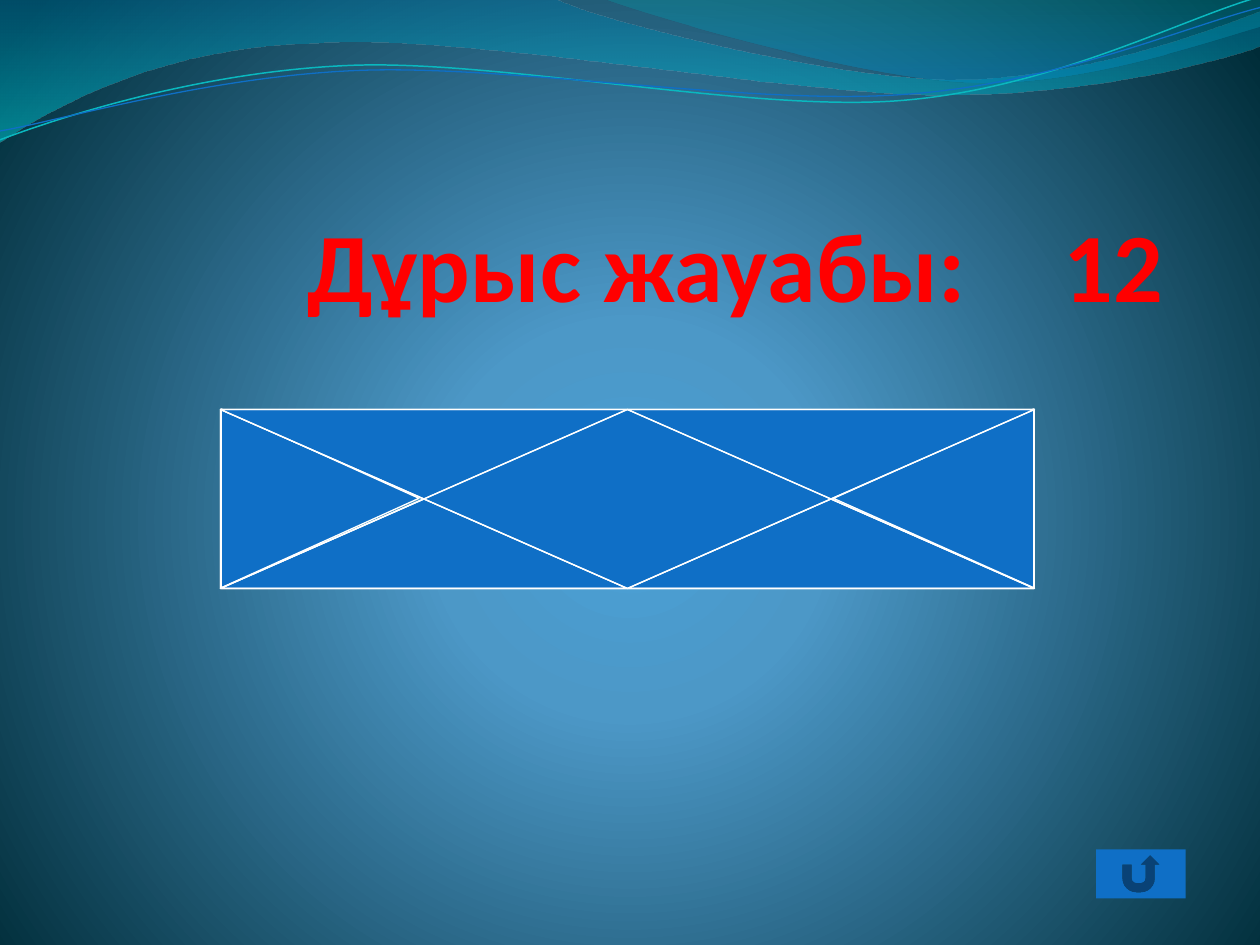
from lxml import etree
from pptx import Presentation
from pptx.dml.color import RGBColor
from pptx.enum import shapes, text
from pptx.oxml.ns import nsdecls, qn
from pptx.util import Inches, Pt

TITLE = "Дұрыс жауабы:\t12"
BLUE, WHITE, RED = "0F6FC6", "FFFFFF", "FF0000"
GLOW = [(0, "4AA0D6", 100), (25, "4C98C7", 100), (100, "002C38", 100)]
ROUND = '<a:path path="circle"><a:fillToRect l="10000" t="110000" r="10000" b="100000"/></a:path>'
DOWN = '<a:lin ang="5400000" scaled="0"/>'

WAVES = [
    ([[(0, 0)], [(4.4, -0.01)],
      [(4.76, 0.17), (6.64, 0.63), (7.58, 0.63)],
      [(8.53, 0.63), (9.58, 0.26), (10, 0.09)], [(10.01, 0.36)],
      [(9.83, 0.44), (8.7, 0.76), (7.46, 0.75)],
      [(6.22, 0.75), (3.82, 0.28), (2.57, 0.34)],
      [(1.29, 0.36), (0.46, 0.83), (-0.01, 1.13)], [(0, 0)]],
     [(0, "0074A1", 45), (100, "00C6CF", 55)]),
    ([[(4.79, -0.01)],
      [(5.09, 0.11), (6.82, 0.62), (7.69, 0.65)],
      [(8.56, 0.69), (9.61, 0.32), (10, 0.21)], [(10, 0)], [(4.79, -0.01)]],
     [(0, "00A1A9", 30), (80, "008BBF", 45)]),
]
STREAKS = [
    ([[(0, 1.11)],
      [(0.48, 0.93), (1.58, 0.57), (2.77, 0.52)],
      [(3.95, 0.47), (5.93, 0.89), (7.13, 0.8)],
      [(8.33, 0.71), (9.38, 0.15), (9.98, -0.02)]], "0AB8BF", 0.85),
    ([[(0, 1.04)],
      [(0.47, 0.96), (1.64, 0.61), (2.83, 0.56)],
      [(4.03, 0.51), (5.97, 0.84), (7.17, 0.75)],
      [(8.36, 0.67), (9.41, 0.21), (10, 0.06)]], BLUE, 0.75),
]

LEFT, TOP, HALF, HIGH = 1.75, 3.25, 3.23, 1.42
MID, ROW = LEFT + HALF, HIGH / 2
KINDS = shapes.MSO_SHAPE
PEAKS = [
    ((1.83, 3.17, HIGH, 1.57), 90, BLUE),
    ((LEFT, TOP + ROW, HALF, ROW), 0, BLUE),
    ((LEFT, TOP, HALF, ROW), 180, BLUE),
    ((MID, TOP, HALF, ROW), 180, BLUE),
    ((MID, TOP + ROW, HALF, ROW), 0, BLUE),
    ((6.7, 3.16, HIGH, 1.59), 270, BLUE),
    ((LEFT, TOP, 2 * HALF, HIGH), 180, BLUE),
    ((LEFT, TOP, 2 * HALF, HIGH), 0, None),
]


def paint(part, color):
    part.solid()
    part.fore_color.rgb = RGBColor.from_string(color)


def blend(fill, host, stops, tail):
    fill.solid()
    old = host.find(".//" + qn("a:solidFill"))
    marks = "".join(
        f'<a:gs pos="{pos * 1000}"><a:srgbClr val="{color}">'
        f'<a:alpha val="{alpha * 1000}"/></a:srgbClr></a:gs>'
        for pos, color, alpha in stops)
    new = etree.fromstring(
        f'<a:gradFill {nsdecls("a")} rotWithShape="1"><a:gsLst>{marks}</a:gsLst>{tail}</a:gradFill>')
    old.getparent().replace(old, new)


def style(shape, fill=None, line=None, width=0.75):
    shape.shadow.inherit = False
    if fill:
        paint(shape.fill, fill)
    else:
        shape.fill.background()
    if line:
        paint(shape.line.fill, line)
        shape.line.width = Pt(width)
    else:
        shape.line.fill.background()


def curve(slide, parts, close):
    dots = [(Inches(x), Inches(y)) for part in parts for x, y in part]
    pen = slide.shapes.build_freeform(*dots[0])
    pen.add_line_segments(dots[1:], close=close)
    shape = pen.convert_to_shape()
    legs = iter(list(shape.element.iter(qn("a:lnTo"))))
    for part in parts[1:]:
        first, *rest = [next(legs) for _ in part]
        if rest:
            bend = etree.Element(qn("a:cubicBezTo"))
            first.addprevious(bend)
            for leg in (first, *rest):
                bend.append(leg[0])
                leg.getparent().remove(leg)
    return shape


def place(slide, kind, box):
    return slide.shapes.add_shape(kind, *map(Inches, box))


def main():
    deck = Presentation()
    deck.slide_width, deck.slide_height = Inches(10), Inches(7.5)
    slide = deck.slides.add_slide(deck.slide_layouts[0])
    spare = slide.placeholders[1].element
    spare.getparent().remove(spare)
    blend(slide.background.fill, slide.element, GLOW, ROUND)

    for parts, stops in WAVES:
        wave = curve(slide, parts, True)
        style(wave)
        blend(wave.fill, wave.element, stops, DOWN)
    for parts, color, width in STREAKS:
        style(curve(slide, parts, False), line=color, width=width)

    for box, turn, fill in PEAKS:
        peak = place(slide, KINDS.ISOSCELES_TRIANGLE, box)
        peak.rotation = turn
        style(peak, fill, WHITE)
    for down in (False, True):
        for side, left in enumerate((LEFT, MID)):
            wedge = place(slide, KINDS.RIGHT_TRIANGLE, (left, TOP, HALF, HIGH))
            style(wedge, line=WHITE)
            frame = wedge.element.spPr.find(qn("a:xfrm"))
            if side:
                frame.set("flipH", "1")
            if down:
                frame.set("flipV", "1")

    title = slide.shapes.title
    title.left, title.top, title.width, title.height = map(Inches, (0.75, 0.99, 8.5, 1.57))
    body = title.text_frame
    body.text = TITLE
    body.auto_size = text.MSO_AUTO_SIZE.NONE
    body.vertical_anchor = text.MSO_ANCHOR.BOTTOM
    body.margin_left = body.margin_top = body.margin_bottom = 0
    body.margin_right = Inches(0.02)
    line = body.paragraphs[0]
    line.alignment = text.PP_ALIGN.RIGHT
    line.font.size = Pt(56)
    props = line.runs[0].font
    props.name, props.size, props.bold = "Calibri", Pt(56), True
    props.color.rgb = RGBColor.from_string(RED)
    rule = line.runs[0].font and body.paragraphs[0]._p.get_or_add_pPr()
    rule.set("defTabSz", str(Inches(1)))
    tabs = etree.Element(qn("a:tabLst"))
    etree.SubElement(tabs, qn("a:tab"), pos=str(Inches(6)), algn="l")
    rule.insert(0, tabs)

    style(place(slide, KINDS.ACTION_BUTTON_RETURN, (8.7, 6.74, 0.71, 0.39)), BLUE)
    deck.save("out.pptx")


if __name__ == "__main__":
    main()
